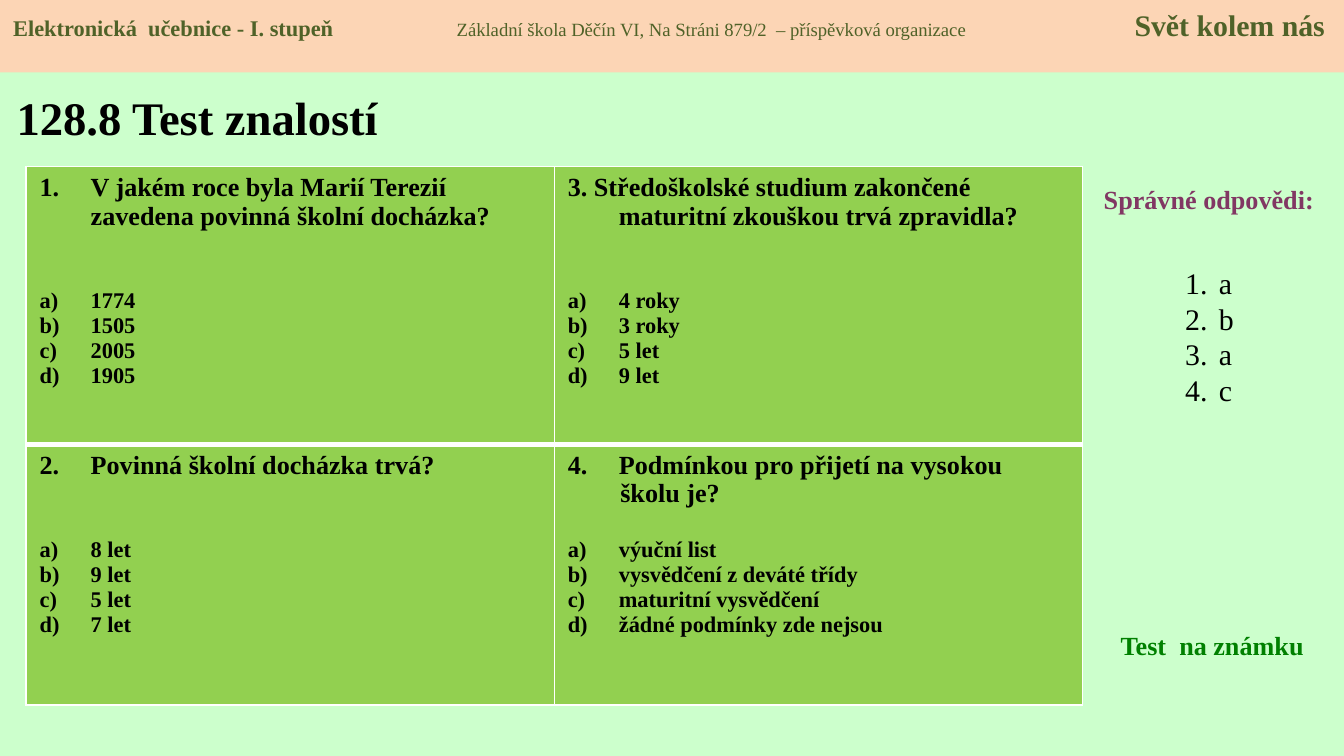
from itertools import product

from lxml.etree import SubElement
from pptx import Presentation
from pptx.dml.color import RGBColor
from pptx.enum.shapes import MSO_SHAPE
from pptx.enum.text import MSO_ANCHOR, PP_ALIGN
from pptx.oxml.ns import qn
from pptx.util import Inches, Pt

WIDTH = Inches(10)
HEIGHT = WIDTH * 9 // 16

MINT = RGBColor(0xCC, 0xFF, 0xCC)
PEACH = RGBColor(0xFC, 0xD5, 0xB5)
LIME = RGBColor(0x92, 0xD0, 0x50)
OLIVE = RGBColor(0x4F, 0x62, 0x28)
PLUM = RGBColor(0x81, 0x37, 0x63)
GREEN = RGBColor(0x00, 0x80, 0x00)
BLACK = RGBColor(0x00, 0x00, 0x00)
WHITE = RGBColor(0xFF, 0xFF, 0xFF)

HEADER = [
    ("Elektronická  učebnice - I. stupeň", 12, True),
    ("\tZákladní škola Děčín VI, Na Stráni 879/2  – příspěvková organizace", 10, False),
    ("\tSvět kolem nás", 16, True),
]
HEADER_TABS = [(3.3, "l"), (9.76, "r")]

# Question lines, automatic number (None where typed), gap in points, options
QUESTIONS = [
    (["V jakém roce byla Marií Terezií zavedena povinná školní docházka?"], 1, 31,
     ["1774", "1505", "2005", "1905"]),
    (["3. Středoškolské studium zakončené maturitní zkouškou trvá zpravidla?"], None, 31,
     ["4 roky", "3 roky", "5 let", "9 let"]),
    (["Povinná školní docházka trvá?"], 2, 31,
     ["8 let", "9 let", "5 let", "7 let"]),
    (["Podmínkou pro přijetí na vysokou", "školu je?"], 4, 15.5,
     ["výuční list", "vysvědčení z deváté třídy", "maturitní vysvědčení",
      "žádné podmínky zde nejsou"]),
]
ROW_SHARES = [36.7, 34.5]
COLUMN_SHARE = 39.3
ANSWERS = ["a", "b", "a", "c"]


def across(percent):
    return round(WIDTH * percent / 100)


def down(percent):
    return round(HEIGHT * percent / 100)


def area(left, top, width, height):
    """Turn shares of the slide, in percent, into a position and size."""
    return across(left), down(top), across(width), down(height)


def add_words(paragraph, words, color=BLACK, **formats):
    run = paragraph.add_run()
    run.text = words
    for name, value in {"name": "Times New Roman", **formats}.items():
        setattr(run.font, name, value)
    run.font.color.rgb = color


def indent(paragraph, margin, first_line, numbering=None, start=1):
    """Set the left margin and first line, with automatic numbering if asked."""
    properties = paragraph._p.get_or_add_pPr()
    properties.set("marL", str(Inches(margin)))
    properties.set("indent", str(Inches(first_line)))
    if numbering:
        number = SubElement(properties, qn("a:buAutoNum"), type=numbering)
        if start > 1:
            number.set("startAt", str(start))


def next_paragraph(frame, index):
    return frame.add_paragraph() if index else frame.paragraphs[0]


def add_label(slide, place, words, color, size, align=PP_ALIGN.LEFT,
              anchor=MSO_ANCHOR.TOP):
    frame = slide.shapes.add_textbox(*area(*place)).text_frame
    frame.word_wrap = True
    frame.vertical_anchor = anchor
    frame.paragraphs[0].alignment = align
    add_words(frame.paragraphs[0], words, color, size=Pt(size), bold=True)


def add_header(slide):
    band = slide.shapes.add_shape(MSO_SHAPE.RECTANGLE, *area(0, 0, 100, 9.6))
    band.shadow.inherit = False
    band.fill.solid()
    band.fill.fore_color.rgb = PEACH
    band.line.fill.background()
    band.text_frame.vertical_anchor = MSO_ANCHOR.TOP
    line = band.text_frame.paragraphs[0]
    line.alignment = PP_ALIGN.LEFT
    tabs = SubElement(line._p.get_or_add_pPr(), qn("a:tabLst"))
    for position, align in HEADER_TABS:
        SubElement(tabs, qn("a:tab"), pos=str(Inches(position)), algn=align)
    for words, size, bold in HEADER:
        add_words(line, words, OLIVE, size=Pt(size), bold=bold)


def draw_borders(cell, widths):
    properties = cell._tc.get_or_add_tcPr()
    for side, width in widths.items():
        border = SubElement(properties, qn(f"a:ln{side}"), w=str(Pt(width)))
        fill = SubElement(border, qn("a:solidFill"))
        SubElement(fill, qn("a:srgbClr"), val=str(WHITE))


def fill_question(cell, question, number, gap, options):
    frame = cell.text_frame
    for index, words in enumerate(question):
        line = next_paragraph(frame, index)
        if index:
            indent(line, 0.39, 0)
        else:
            indent(line, 0.38, -0.38, number and "arabicPeriod", number or 1)
        add_words(line, words, size=Pt(14), bold=True)
    for index, option in enumerate(options):
        line = frame.add_paragraph()
        indent(line, 0.38, -0.38, "alphaLcParenR")
        line.space_before = Pt(0 if index else gap)
        add_words(line, option, size=Pt(12), bold=True)


def add_test(slide):
    place = area(1.95, 22.04, 2 * COLUMN_SHARE, sum(ROW_SHARES))
    table = slide.shapes.add_table(2, 2, *place).table
    for row, share in zip(table.rows, ROW_SHARES):
        row.height = down(share)
    for column in table.columns:
        column.width = across(COLUMN_SHARE)
    for (row, column), question in zip(product(range(2), repeat=2), QUESTIONS):
        cell = table.cell(row, column)
        draw_borders(cell, {"L": 1, "R": 1, "T": 3 if row else 1, "B": 1 if row else 3})
        cell.fill.solid()
        cell.fill.fore_color.rgb = LIME
        fill_question(cell, *question)


def add_answers(slide):
    frame = slide.shapes.add_textbox(*area(87.2, 34.25, 7, 24.9)).text_frame
    frame.word_wrap = True
    for index, answer in enumerate(ANSWERS):
        line = next_paragraph(frame, index)
        indent(line, 0.25, -0.25, "arabicPeriod")
        line.line_spacing = Pt(19)
        add_words(line, answer, size=Pt(16))


def main():
    deck = Presentation()
    deck.slide_width, deck.slide_height = WIDTH, HEIGHT
    slide = deck.slides.add_slide(deck.slide_layouts[6])
    slide.background.fill.solid()
    slide.background.fill.fore_color.rgb = MINT

    add_label(slide, (0.25, 9.7, 31.9, 11.56), "128.8 Test znalostí", BLACK, 25,
              anchor=MSO_ANCHOR.MIDDLE)
    add_label(slide, (80.5, 23.4, 18.9, 6.05), "Správné odpovědi:", PLUM, 14,
              align=PP_ALIGN.CENTER)
    add_test(slide)
    add_answers(slide)
    add_label(slide, (82.4, 82.4, 16.7, 6.05), "Test  na známku", GREEN, 14)
    add_header(slide)
    deck.save("out.pptx")


if __name__ == "__main__":
    main()
